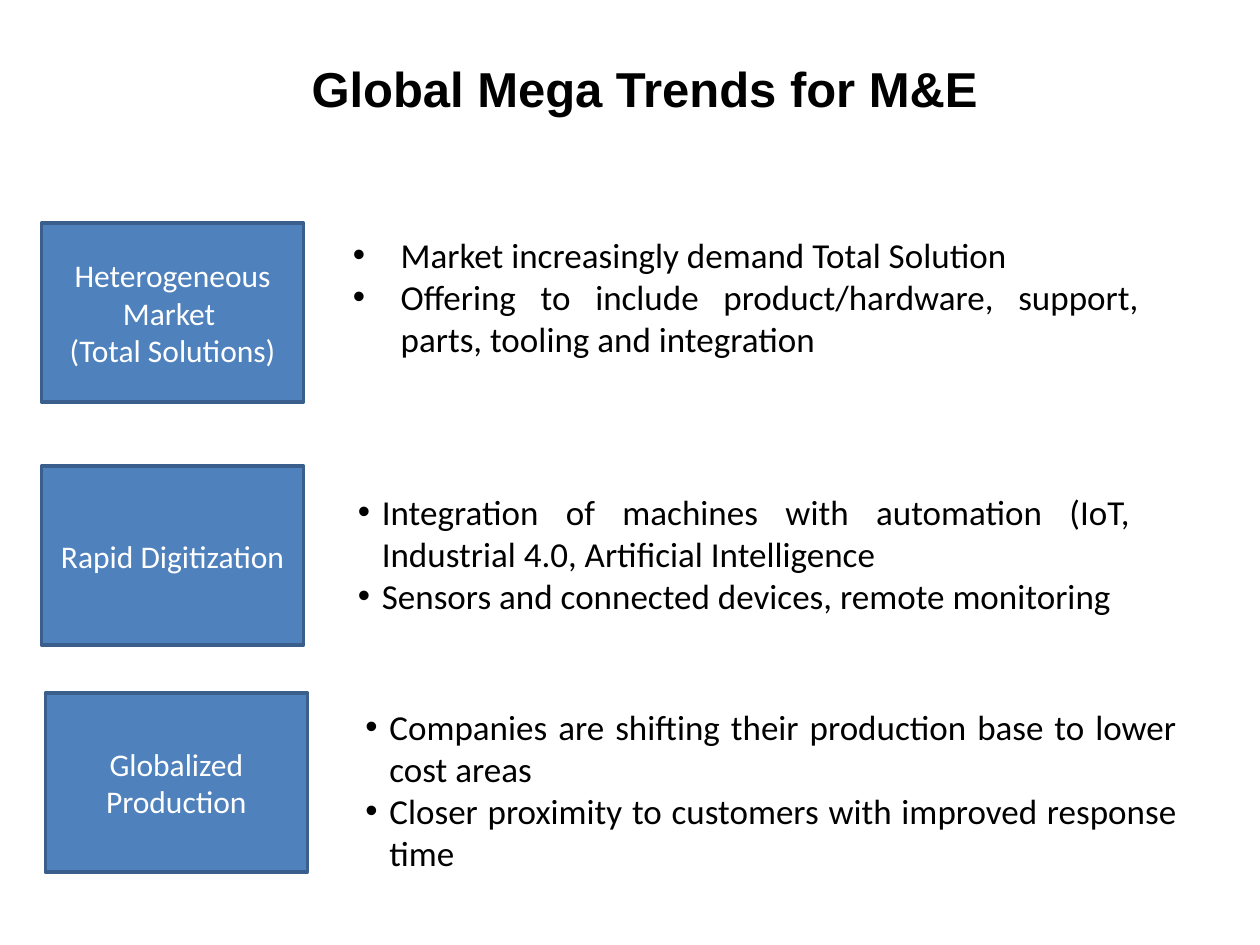
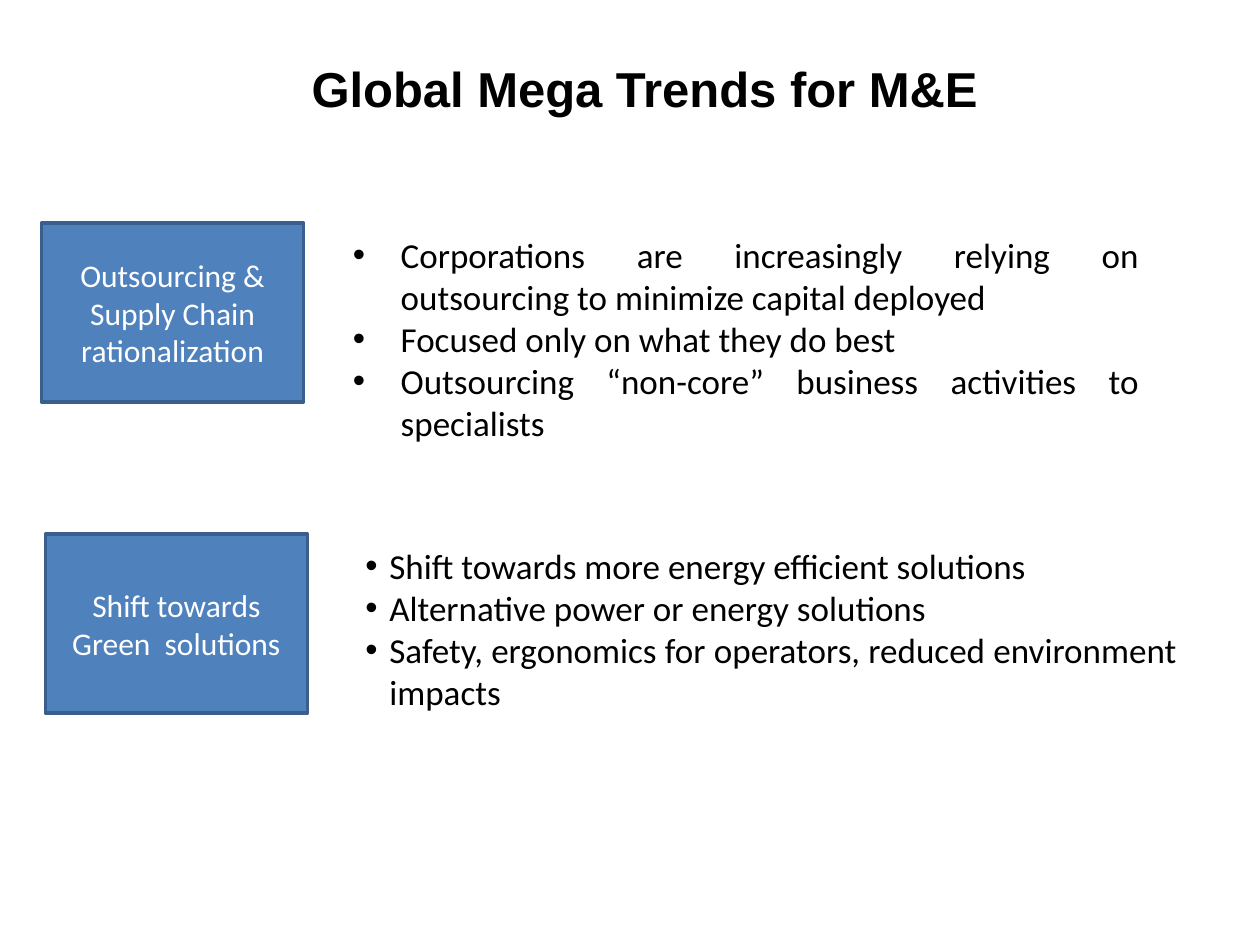
from dataclasses import dataclass

from lxml.etree import SubElement
from pptx import Presentation
from pptx.dml.color import RGBColor
from pptx.enum.shapes import MSO_SHAPE as Shape
from pptx.enum.text import MSO_ANCHOR as Anchor, MSO_AUTO_SIZE as AutoSize, PP_ALIGN as Align
from pptx.oxml.ns import qn
from pptx.util import Inches, Pt

# Slide grid: 100 columns by 75 rows
WIDTH, HEIGHT = Inches(10), Inches(7.5)
COLUMNS, ROWS = 100, 75

# Shared style
BLACK, WHITE, BLUE, DARK_BLUE = "000000", "FFFFFF", "4F81BD", "3A5F8C"
TITLE_FONT, TEXT_FONT = "Arial", "Calibri"
TITLE = "Global Mega Trends for M&E "
TITLE_AREA = (6.7, 0.7, 90, 12.5)
LABEL_WIDTH, LABEL_HEIGHT = 20.8, 14.2
LINE_ROWS, LIST_MARGIN_ROWS = 3.35, 1.1
TWO_CONTENT, COMPARISON = 3, 4


@dataclass(frozen=True)
class Band:
    """Horizontal measures of a label and its list, in columns."""
    label_left: float
    list_left: float
    list_width: float
    indent: float


@dataclass(frozen=True)
class Trend:
    """A label with its bullets; tops in rows, list height in text lines."""
    label: list[str]
    bullets: list[str]
    band: Band
    label_top: float
    list_top: float
    lines: int


WIDE = Band(3.3, 27, 64.4, 3.8)
NARROW = Band(3.3, 27.4, 63.3, 1.9)
SHIFTED = Band(3.6, 28, 66.4, 1.9)

SLIDES = [
    (COMPARISON, [
        Trend(["Heterogeneous Market ", "(Total Solutions)"],
              ["Market increasingly demand Total Solution",
               "Offering to include product/hardware, support, parts, tooling and integration"],
              WIDE, 17.7, 18, 4),
        Trend(["Rapid Digitization"],
              ["Integration of machines with automation (IoT, Industrial 4.0, Artificial Intelligence",
               "Sensors and connected devices, remote monitoring"],
              NARROW, 37, 38.4, 3),
        Trend(["Globalized Production"],
              ["Companies are shifting their production base to lower cost areas",
               "Closer proximity to customers with improved response time"],
              SHIFTED, 55, 55.5, 4),
    ]),
    (TWO_CONTENT, [
        Trend(["Outsourcing & Supply Chain rationalization"],
              ["Corporations are increasingly relying on outsourcing to minimize capital deployed",
               "Focused only on what they do best",
               "Outsourcing “non-core” business activities to specialists"],
              WIDE, 17.7, 18, 6),
        Trend(["Shift towards Green  solutions"],
              ["Shift towards more energy efficient solutions",
               "Alternative power or energy solutions",
               "Safety, ergonomics for operators, reduced environment impacts"],
              SHIFTED, 42.4, 42.7, 4),
    ]),
]


def color(code: str) -> RGBColor:
    return RGBColor.from_string(code)


def across(columns: float) -> int:
    return round(WIDTH * columns / COLUMNS)


def down(rows: float) -> int:
    return round(HEIGHT * rows / ROWS)


def area(left: float, top: float, width: float, height: float) -> tuple[int, int, int, int]:
    return across(left), down(top), across(width), down(height)


def move(box, left: float, top: float, width: float, height: float) -> None:
    box.left, box.top, box.width, box.height = area(left, top, width, height)


def style(para, align: Align, font: str, size: int, code: str, bold: bool = False) -> None:
    para.alignment = align
    para.font.name, para.font.size, para.font.bold = font, Pt(size), bold
    para.font.color.rgb = color(code)


def add_bullet(para, indent: int) -> None:
    properties = para._p.get_or_add_pPr()
    properties.set("marL", str(indent))
    properties.set("indent", str(-indent))
    SubElement(properties, qn("a:buFont"), typeface="Arial")
    SubElement(properties, qn("a:buChar"), char="•")


def draw_title(box) -> None:
    move(box, *TITLE_AREA)
    box.text_frame.text = TITLE
    style(box.text_frame.paragraphs[0], Align.CENTER, TITLE_FONT, 28, BLACK, bold=True)


def draw_label(page, trend: Trend) -> None:
    box = page.shapes.add_shape(
        Shape.RECTANGLE, *area(trend.band.label_left, trend.label_top, LABEL_WIDTH, LABEL_HEIGHT))
    box.shadow.inherit = False
    box.fill.solid()
    box.fill.fore_color.rgb = color(BLUE)
    box.line.color.rgb = color(DARK_BLUE)
    box.line.width = Pt(2)
    frame = box.text_frame
    frame.word_wrap = True
    frame.vertical_anchor = Anchor.MIDDLE
    frame.text = "\n".join(trend.label)
    for para in frame.paragraphs:
        style(para, Align.CENTER, TEXT_FONT, 18, WHITE)


def draw_list(box, trend: Trend) -> None:
    band = trend.band
    move(box, band.list_left, trend.list_top, band.list_width,
         trend.lines * LINE_ROWS + LIST_MARGIN_ROWS)
    frame = box.text_frame
    frame.word_wrap = True
    frame.auto_size = AutoSize.SHAPE_TO_FIT_TEXT
    frame.vertical_anchor = Anchor.TOP
    frame.text = "\n".join(trend.bullets)
    for para in frame.paragraphs:
        para.space_before = Pt(0)
        add_bullet(para, across(band.indent))
        style(para, Align.JUSTIFY, TEXT_FONT, 20, BLACK)


def draw_slide(deck, layout: int, trends: list[Trend]) -> None:
    page = deck.slides.add_slide(deck.slide_layouts[layout])
    title, *bodies = page.placeholders
    draw_title(title)
    for body, trend in zip(bodies, trends):
        draw_label(page, trend)
        draw_list(body, trend)
    # Unused list placeholders
    for body in bodies[len(trends):]:
        body.element.getparent().remove(body.element)


def main() -> None:
    deck = Presentation()
    deck.slide_width, deck.slide_height = WIDTH, HEIGHT
    for layout, trends in SLIDES:
        draw_slide(deck, layout, trends)
    deck.save("out.pptx")


if __name__ == "__main__":
    main()
